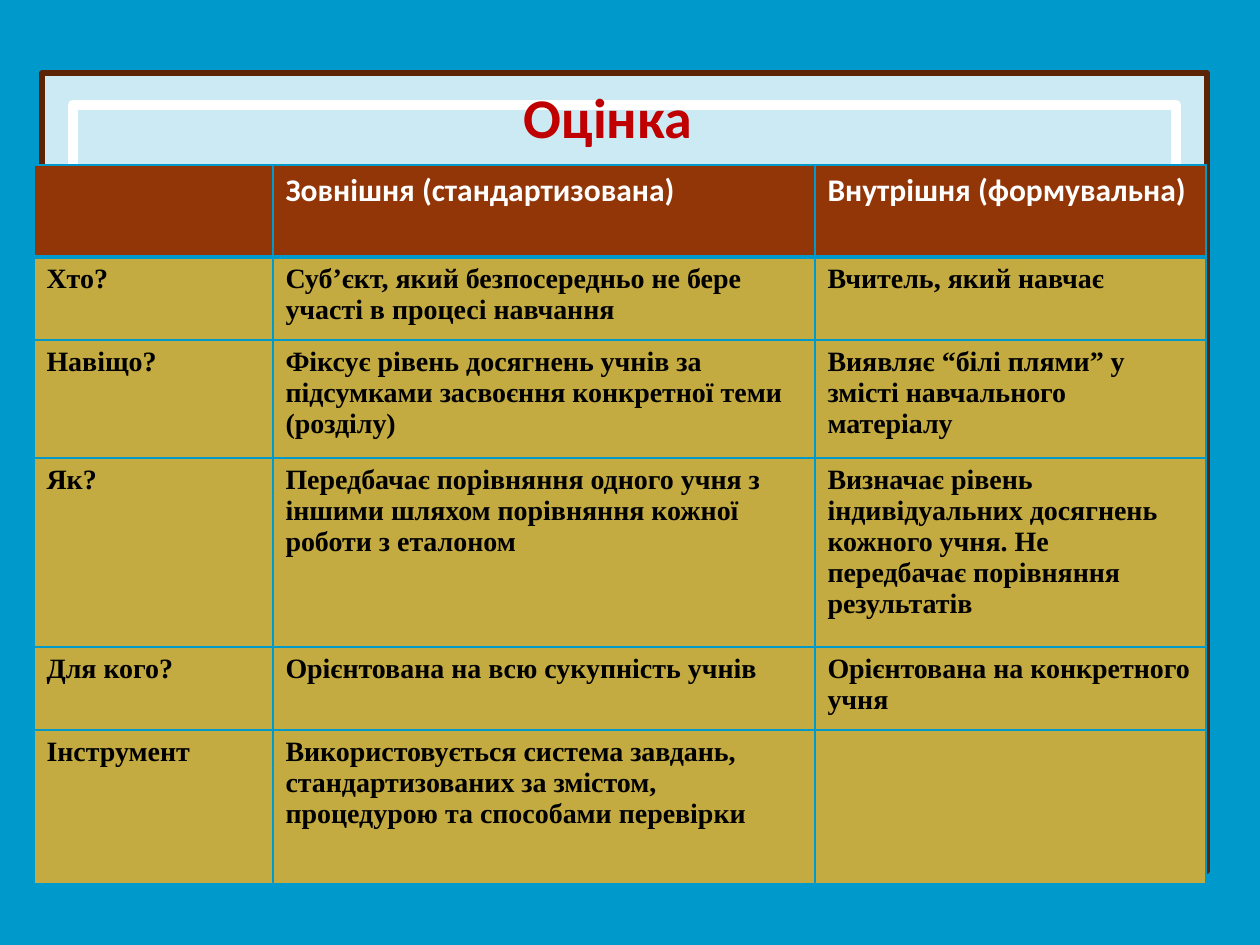
from lxml.etree import SubElement
from pptx import Presentation
from pptx.dml.color import RGBColor as RGB
from pptx.enum.shapes import MSO_SHAPE as SHAPE
from pptx.enum.text import MSO_ANCHOR as ANCHOR, PP_ALIGN as ALIGN
from pptx.oxml.ns import qn
from pptx.util import Pt

PX = 914400 / 126
THEME = {
    "bg": "0099CC", "panel": "FFFFFF", "frame": "5C2305", "head": "923608", "body": "C3AA41",
    "title": {"name": "Calibri", "size": Pt(32), "bold": True, "color": "C00000"},
    "head_font": {"name": "Calibri", "size": Pt(18), "bold": True, "color": "FFFFFF"},
    "body_font": {"name": "Times New Roman", "size": Pt(16), "bold": True, "color": "000000"},
}
COLS = [239, 542, 391]
ROWS = [92, 83, 118, 189, 83, 154]
TEXT = [
    ["", "Зовнішня (стандартизована)", "Внутрішня (формувальна)"],
    ["Хто?", "Суб’єкт, який безпосередньо не бере участі в процесі навчання",
     "Вчитель, який навчає"],
    ["Навіщо?",
     "Фіксує рівень досягнень учнів за підсумками засвоєння конкретної теми (розділу)",
     "Виявляє “білі плями” у змісті навчального матеріалу"],
    ["Як?",
     "Передбачає порівняння одного учня з іншими шляхом порівняння кожної роботи з еталоном",
     "Визначає рівень індивідуальних досягнень кожного учня. "
     "Не передбачає порівняння результатів"],
    ["Для кого?", "Орієнтована на всю сукупність учнів", "Орієнтована на конкретного учня"],
    ["Інструмент",
     "Використовується система завдань, стандартизованих за змістом, "
     "процедурою та способами перевірки", ""],
]


def box(*sides):
    return [round(v * PX) for v in sides]


def write(p, text, style):
    r = p.add_run()
    r.text = text
    for key, value in style.items():
        if key == "color":
            r.font.color.rgb = RGB.from_string(value)
        else:
            setattr(r.font, key, value)


prs = Presentation()
prs.slide_width, prs.slide_height = box(1260, 945)
s = prs.slides.add_slide(prs.slide_layouts[6])
s.background.fill.solid()
s.background.fill.fore_color.rgb = RGB.from_string(THEME["bg"])

for sides, line, width, alpha in [
    ((42, 73, 1165, 798), THEME["frame"], 3, 80000),
    ((73, 105, 1103, 735), THEME["panel"], 6, None),
]:
    sp = s.shapes.add_shape(SHAPE.RECTANGLE, *box(*sides))
    sp.shadow.inherit = False
    sp.line.color.rgb = RGB.from_string(line)
    sp.line.width = Pt(width)
    if alpha:
        sp.fill.solid()
        sp.fill.fore_color.rgb = RGB.from_string(THEME["panel"])
        color = sp.fill._xPr.find(qn("a:solidFill"))[0]
        SubElement(color, qn("a:alpha"), val=str(alpha))
    else:
        sp.fill.background()

tf = s.shapes.add_textbox(*box(164, 66, 888, 100)).text_frame
tf.word_wrap = True
tf.vertical_anchor = ANCHOR.MIDDLE
tf.paragraphs[0].alignment = ALIGN.CENTER
write(tf.paragraphs[0], "Оцінка", THEME["title"])

table = s.shapes.add_table(len(ROWS), len(COLS), *box(34, 165, sum(COLS), sum(ROWS))).table
for col, width in zip(table.columns, box(*COLS)):
    col.width = width
for row, height in zip(table.rows, box(*ROWS)):
    row.height = height

for i, line in enumerate(TEXT):
    kind = "body" if i else "head"
    borders = {"lnL": 1, "lnR": 1, "lnT": 3 if i == 1 else 1, "lnB": 3 if i == 0 else 1}
    for j, text in enumerate(line):
        cell = table.cell(i, j)
        tcPr = cell._tc.get_or_add_tcPr()
        for tag, width in borders.items():
            ln = SubElement(tcPr, qn(f"a:{tag}"), w=str(Pt(width)))
            SubElement(SubElement(ln, qn("a:solidFill")), qn("a:srgbClr"), val=THEME["bg"])
        cell.fill.solid()
        cell.fill.fore_color.rgb = RGB.from_string(THEME[kind])
        if text:
            write(cell.text_frame.paragraphs[0], text, THEME[f"{kind}_font"])

prs.save("out.pptx")
